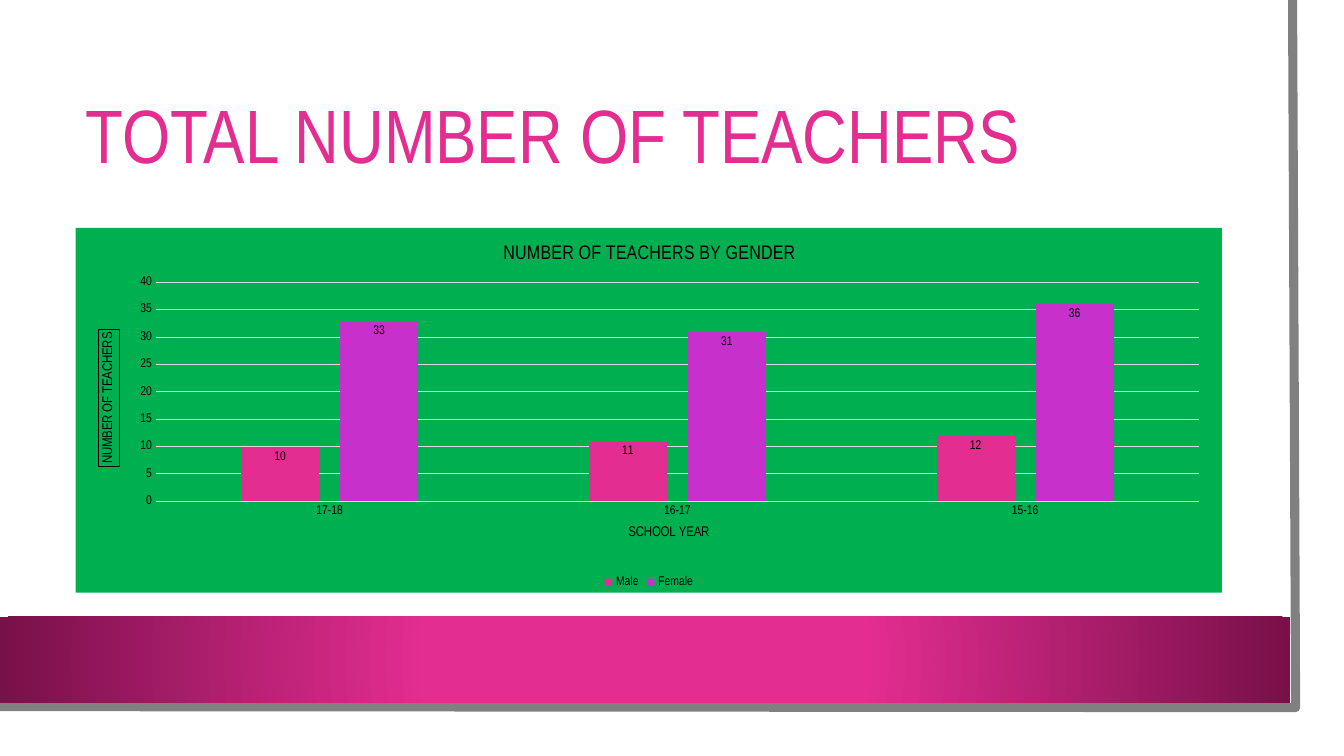
from lxml import etree
from pptx import Presentation
from pptx import util as u
from pptx.chart.data import CategoryChartData
from pptx.dml.color import RGBColor
from pptx.enum import chart as ch
from pptx.enum import shapes, text
from pptx.oxml import parse_xml
from pptx.oxml.ns import nsdecls, qn

WIDTH, HEIGHT = 13.33, 7.5
FONT = "Arial Narrow"
COLORS = {"paper": "FFFFFF", "edge": "808080", "pink": "E32D91", "wine": "781049",
          "green": "00B050", "purple": "C830CC", "grid": "D9D9D9", "ink": "000000"}
YEARS = ["17-18", "16-17", "15-16"]
TEACHERS = {"Male": ([10, 11, 12], "pink"), "Female": ([33, 31, 36], "purple")}


def rgb(name):
    return RGBColor.from_string(COLORS[name])


def style_font(font, size, color="ink"):
    font.name, font.size, font.bold = FONT, u.Pt(size), False
    font.color.rgb = rgb(color)


def style_line(line, color, width):
    line.color.rgb = rgb(color)
    line.width = u.Pt(width)


def add_rectangle(slide, box, color):
    shape = slide.shapes.add_shape(shapes.MSO_SHAPE.RECTANGLE, *map(u.Inches, box))
    shape.shadow.inherit = False
    shape.fill.solid()
    shape.fill.fore_color.rgb = rgb(color)
    shape.line.fill.background()
    return shape


def add_frame(slide, box):
    """White sheet with a grey edge and a radial band along its foot."""
    left, top, width, height = box
    add_rectangle(slide, box, "paper")

    # Grey edge on the right and bottom
    right, bottom = left + width - 0.25, top + height - 0.25
    builder = slide.shapes.build_freeform(u.Inches(right - 0.03), u.Inches(top))
    corners = [(right, bottom), (left - 0.03, bottom - 0.01)]
    builder.add_line_segments([(u.Inches(x), u.Inches(y)) for x, y in corners], close=False)
    edge = builder.convert_to_shape()
    edge.shadow.inherit = False
    edge.fill.background()
    style_line(edge.line, "edge", 6.5)

    # Band with a radial gradient
    band = add_rectangle(slide, (left, bottom - 0.9, width - 0.3, 0.85), "pink")
    stops = "".join(f'<a:gs pos="{share * 1000}"><a:srgbClr val="{COLORS[name]}"/></a:gs>'
                    for share, name in ((34, "pink"), (100, "wine")))
    gradient = parse_xml(
        f'<a:gradFill {nsdecls("a")} rotWithShape="1"><a:gsLst>{stops}</a:gsLst><a:path path="circle">'
        '<a:fillToRect l="50000" t="50000" r="50000" b="50000"/></a:path></a:gradFill>')
    properties = band.fill._xPr
    properties.replace(properties.find(qn("a:solidFill")), gradient)


def add_title(slide, box, words):
    frame = slide.shapes.add_textbox(*map(u.Inches, box)).text_frame
    frame.word_wrap = True
    frame.vertical_anchor = text.MSO_ANCHOR.MIDDLE
    paragraph = frame.paragraphs[0]
    paragraph.line_spacing = 0.9
    run = paragraph.add_run()
    run.text = words
    style_font(run.font, 54, "pink")


def place(parent, before, **shares):
    """Give a chart part a manual layout, in shares of the chart."""
    for old in parent.findall(qn("c:layout")):
        parent.remove(old)
    layout = etree.Element(qn("c:layout"))
    manual = etree.SubElement(layout, qn("c:manualLayout"))
    settings = {"layoutTarget": "inner"} if "w" in shares else {}
    settings.update({"xMode": "edge", "yMode": "edge"}, **shares)
    for tag, value in settings.items():
        etree.SubElement(manual, qn(f"c:{tag}")).set("val", str(value))
    parent.find(qn(before)).addprevious(layout)


def write_chart_title(title, words, size, x, y):
    run = title.text_frame.paragraphs[0].add_run()
    run.text = words
    style_font(run.font, size)
    element = title._element
    if element.find(qn("c:overlay")) is None:
        overlay = etree.Element(qn("c:overlay"))
        overlay.set("val", "0")
        element.find(qn("c:tx")).addnext(overlay)
    place(element, "c:overlay", x=x, y=y)


def add_teacher_chart(slide, box):
    data = CategoryChartData(number_format="#,##0")
    data.categories = YEARS
    for name, (counts, _) in TEACHERS.items():
        data.add_series(name, counts)
    chart = slide.shapes.add_chart(ch.XL_CHART_TYPE.COLUMN_CLUSTERED,
                                   *map(u.Inches, box), data).chart
    style_font(chart.font, 10)

    # Green background
    background = parse_xml(f'<c:spPr {nsdecls("c", "a")}><a:solidFill><a:srgbClr val="{COLORS["green"]}"/>'
                           '</a:solidFill><a:ln><a:noFill/></a:ln></c:spPr>')
    chart._chartSpace.find(qn("c:chart")).addnext(background)

    # Axes
    years, counts_axis = chart.category_axis, chart.value_axis
    for axis in (years, counts_axis):
        axis.major_tick_mark = axis.minor_tick_mark = ch.XL_TICK_MARK.NONE
        style_font(axis.tick_labels.font, 9)
    style_line(years.format.line, "grid", 0.75)
    counts_axis.format.line.fill.background()
    counts_axis.minimum_scale, counts_axis.maximum_scale, counts_axis.major_unit = 0, 40, 5
    style_line(counts_axis.major_gridlines.format.line, "grid", 0.75)

    # Titles
    chart.has_title = True
    write_chart_title(chart.chart_title, "NUMBER OF TEACHERS BY GENDER", 14, 0.37, 0.03)
    write_chart_title(years.axis_title, "SCHOOL YEAR", 10, 0.48, 0.81)
    write_chart_title(counts_axis.axis_title, "NUMBER OF TEACHERS", 10, 0.02, 0.28)
    counts_axis.axis_title.text_frame._txBody.find(qn("a:bodyPr")).set("rot", "-5400000")
    style_line(counts_axis.axis_title.format.line, "ink", 0.75)

    # Columns
    plot = chart.plots[0]
    plot.gap_width, plot.overlap, plot.vary_by_categories = 219, -27, False
    for series, (_, color) in zip(plot.series, TEACHERS.values()):
        series.format.fill.solid()
        series.format.fill.fore_color.rgb = rgb(color)
        labels = series.data_labels
        labels.show_value = True
        labels.number_format, labels.number_format_is_linked = "#,##0", False
        labels.position = ch.XL_LABEL_POSITION.INSIDE_END
        style_font(labels.font, 9)
    place(chart._chartSpace.find(".//" + qn("c:plotArea")), "c:barChart",
          x=0.07, y=0.15, w=0.91, h=0.6)

    # Legend
    chart.has_legend = True
    chart.legend.position = ch.XL_LEGEND_POSITION.BOTTOM
    chart.legend.include_in_layout = False
    style_font(chart.legend.font, 9)


def main():
    presentation = Presentation()
    presentation.slide_width, presentation.slide_height = u.Inches(WIDTH), u.Inches(HEIGHT)
    slide = presentation.slides.add_slide(presentation.slide_layouts[6])
    add_frame(slide, (0, 0, 13.1, 7.27))
    margin, content_width = 0.75, 11.37
    add_title(slide, (margin, 0.75, content_width, 1.26), "TOTAL NUMBER OF TEACHERS")
    add_teacher_chart(slide, (margin, 2.26, content_width, 3.62))
    presentation.save("out.pptx")


if __name__ == "__main__":
    main()
